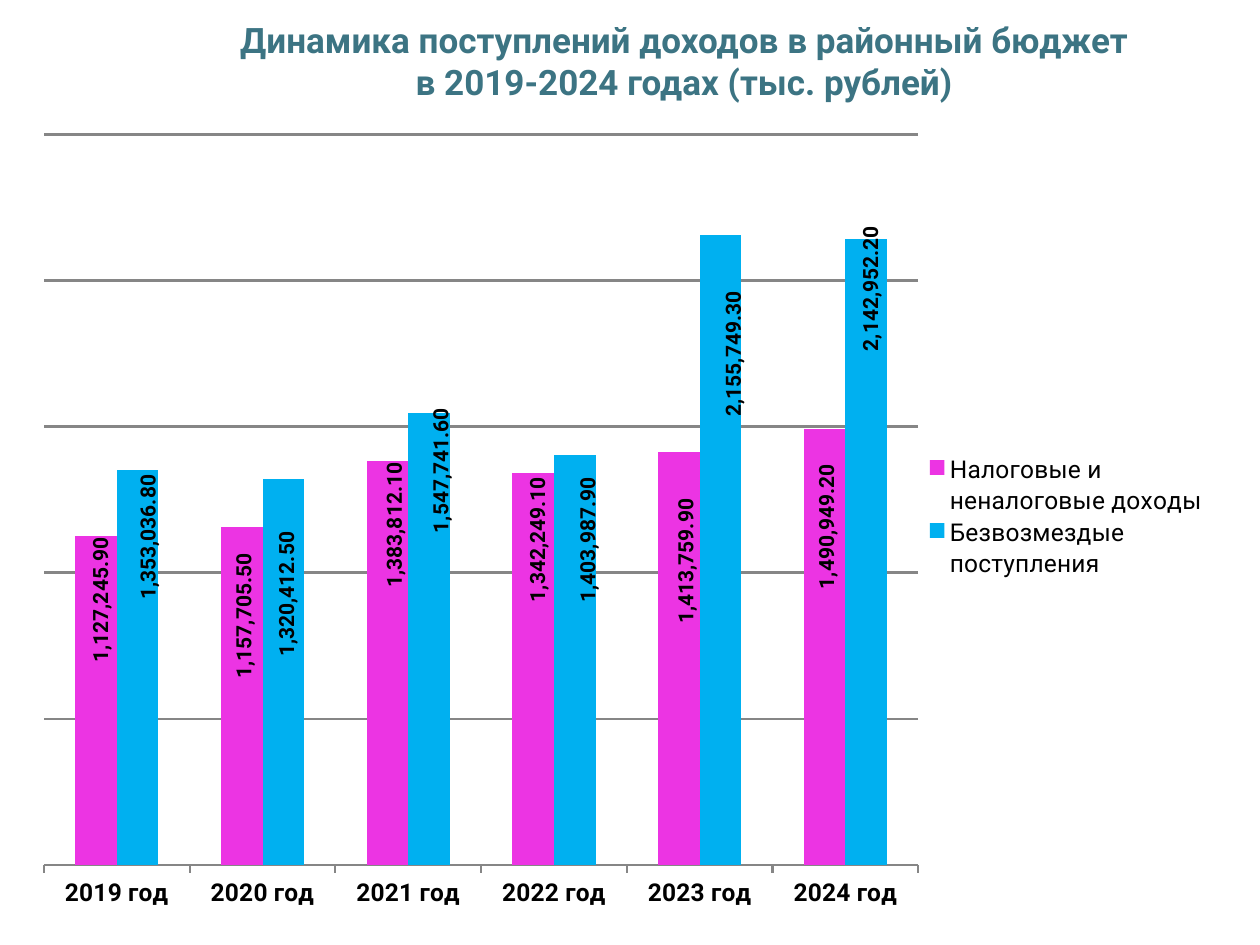
"""Build a slide with a clustered column chart of district budget revenues."""
from dataclasses import dataclass

from lxml.etree import SubElement
from pptx import Presentation
from pptx.chart.chart import Chart
from pptx.chart.data import CategoryChartData
from pptx.chart.series import BarSeries
from pptx.dml.color import RGBColor
from pptx.enum.chart import XL_CHART_TYPE as ChartType
from pptx.enum.chart import XL_LABEL_POSITION as LabelPosition
from pptx.enum.chart import XL_LEGEND_POSITION as LegendPosition
from pptx.enum.chart import XL_TICK_MARK as TickMark
from pptx.enum.text import MSO_ANCHOR as Anchor
from pptx.enum.text import MSO_AUTO_SIZE as AutoSize
from pptx.enum.text import PP_ALIGN as Align
from pptx.oxml.ns import qn
from pptx.util import Cm, Pt

FONT = "Roboto"
NUMBER_FORMAT = "#,##0.00"
LABEL_EXTENSION = "{CE6537A1-D6FC-4f65-9D91-7224C49458BB}"
CHART_2012 = "http://schemas.microsoft.com/office/drawing/2012/chart"
TEAL = RGBColor(0x3C, 0x74, 0x83)
BLACK = RGBColor(0, 0, 0)
GRAY = RGBColor(0x86, 0x86, 0x86)
MAGENTA = RGBColor(0xEC, 0x34, 0xE3)
BLUE = RGBColor(0, 0xB0, 0xF0)


@dataclass
class Revenue:
    name: str
    color: RGBColor
    values: list[float]
    label_shifts: list[tuple[float, float]]


YEARS = [f"{year} год" for year in range(2019, 2025)]
REVENUES = [
    Revenue(
        "Налоговые и неналоговые доходы", MAGENTA,
        [1127245.9, 1157705.5, 1383812.1, 1342249.1, 1413759.9, 1490949.2],
        [(0.004, 0.164), (0.002, 0.195), (0.006, 0.164),
         (0.004, 0.167), (0.006, 0.22), (0.002, 0.205)],
    ),
    Revenue(
        "Безвозмездые поступления", BLUE,
        [1353036.8, 1320412.5, 1547741.6, 1403987.9, 2155749.3, 2142952.2],
        [(0.009, 0.168), (0.003, 0.227), (0.01, 0.156),
         (0.011, 0.19), (0.011, 0.232), (0.004, 0.146)],
    ),
]


def apply_format(target: object, values: dict) -> None:
    for name, value in values.items():
        setattr(target, name, value)


def format_font(font, size: float, bold: bool, color: RGBColor = BLACK) -> None:
    apply_format(font, {"name": FONT, "size": Pt(size), "bold": bold})
    font.color.rgb = color


def place(parent, index: int, values: dict) -> None:
    for old in parent.findall(qn("c:layout")):
        parent.remove(old)
    layout = SubElement(parent, qn("c:layout"))
    manual = SubElement(layout, qn("c:manualLayout"))
    for tag, value in values.items():
        SubElement(manual, qn(f"c:{tag}")).set("val", str(value))
    parent.insert(index, layout)


def hide_leader_lines(labels) -> None:
    for old in labels.findall(qn("c:showLeaderLines")):
        old.set("val", "0")
    extensions = SubElement(labels, qn("c:extLst"))
    extension = SubElement(extensions, qn("c:ext"), uri=LABEL_EXTENSION)
    SubElement(extension, f"{{{CHART_2012}}}showLeaderLines",
               nsmap={"c15": CHART_2012}).set("val", "0")


def format_series(series: BarSeries, revenue: Revenue) -> None:
    series.format.fill.solid()
    series.format.fill.fore_color.rgb = revenue.color
    labels = series.data_labels
    apply_format(labels, {"show_value": True, "number_format": NUMBER_FORMAT,
                          "number_format_is_linked": False,
                          "position": LabelPosition.OUTSIDE_END})
    format_font(labels.font, 12, True)
    for index in range(len(revenue.values)):
        label = series.points[index].data_label
        format_font(label.font, 12, True)
        label.position = LabelPosition.OUTSIDE_END
    for body in series._element.iter(qn("a:bodyPr")):
        body.attrib.update({"rot": "-5400000", "vert": "horz"})
    label_list = series._element.find(qn("c:dLbls"))
    point_labels = label_list.findall(qn("c:dLbl"))
    for element, (across, down) in zip(point_labels, revenue.label_shifts):
        place(element, 1, {"x": across, "y": down})
    hide_leader_lines(label_list)


def format_axes(chart: Chart) -> None:
    years = chart.category_axis
    apply_format(years, {"major_tick_mark": TickMark.OUTSIDE,
                         "minor_tick_mark": TickMark.NONE,
                         "has_major_gridlines": False})
    format_font(years.tick_labels.font, 14, True)
    amounts = chart.value_axis
    apply_format(amounts, {"visible": False, "minimum_scale": 0,
                           "maximum_scale": 2500000, "major_unit": 500000,
                           "has_major_gridlines": True})
    for line, width in ((years.format.line, 1.25),
                        (amounts.major_gridlines.format.line, 1.5)):
        line.color.rgb = GRAY
        line.width = Pt(width)


def add_revenue_chart(page) -> None:
    data = CategoryChartData(number_format=NUMBER_FORMAT)
    data.categories = YEARS
    for revenue in REVENUES:
        data.add_series(revenue.name, revenue.values)
    chart = page.shapes.add_chart(
        ChartType.COLUMN_CLUSTERED, Cm(0.5), Cm(2.32), Cm(24.21), Cm(16.21), data
    ).chart
    apply_format(chart, {"has_title": False, "has_legend": True})
    format_font(chart.font, 18, False)
    plot = chart.plots[0]
    apply_format(plot, {"gap_width": 150, "overlap": 0, "vary_by_categories": False})
    for series, revenue in zip(plot.series, REVENUES):
        format_series(series, revenue)
    format_axes(chart)
    legend = chart.legend
    apply_format(legend, {"position": LegendPosition.RIGHT, "include_in_layout": False})
    format_font(legend.font, 14, False)
    edges = {"xMode": "edge", "yMode": "edge"}
    place(legend._element, 1, edges | {"x": 0.747, "y": 0.42, "w": 0.24, "h": 0.16})
    area = chart._chartSpace.chart.plotArea
    place(area, 0, {"layoutTarget": "inner"} | edges
          | {"x": 0.016, "y": 0.024, "w": 0.728, "h": 0.909})


def add_title(page) -> None:
    title = page.shapes.title
    apply_format(title, {"left": Cm(4.5), "top": Cm(0.72),
                         "width": Cm(18.59), "height": Cm(0.99)})
    frame = title.text_frame
    apply_format(frame, {"word_wrap": True, "auto_size": AutoSize.NONE,
                         "vertical_anchor": Anchor.MIDDLE})
    para = frame.paragraphs[0]
    para.alignment = Align.CENTER
    span = para.add_run()
    span.text = ("Динамика поступлений доходов в районный бюджет "
                 "в 2019-2024 годах (тыс. рублей)")
    format_font(span.font, 20, True, TEAL)


def main() -> None:
    deck = Presentation()
    apply_format(deck, {"slide_width": Cm(25.4), "slide_height": Cm(19.05)})
    page = deck.slides.add_slide(deck.slide_layouts[5])
    add_revenue_chart(page)
    add_title(page)
    deck.save("out.pptx")


if __name__ == "__main__":
    main()
